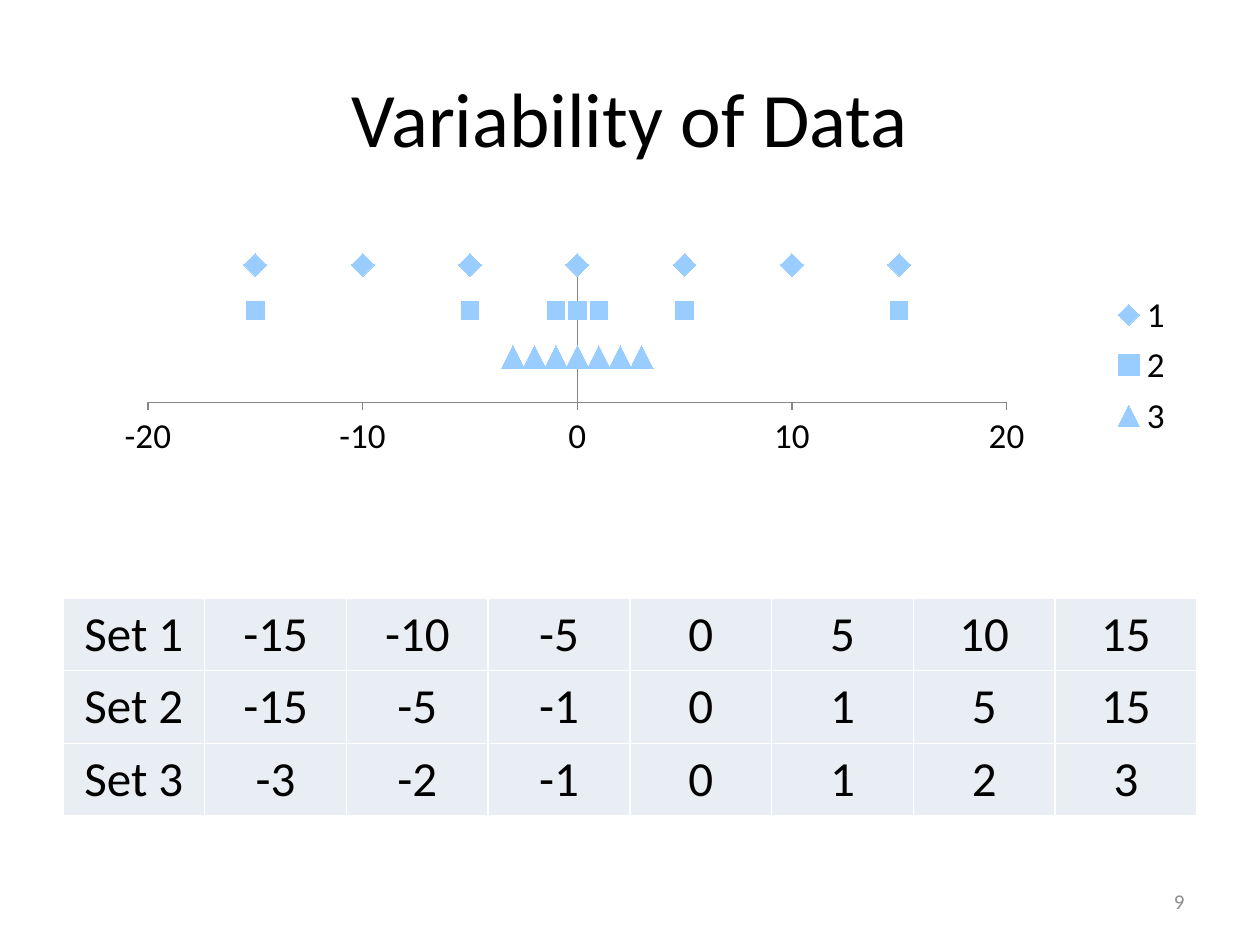
from lxml.etree import SubElement as Sub
from pptx import Presentation
from pptx.chart.data import XyChartData
from pptx.dml.color import RGBColor as RGB
from pptx.enum.chart import XL_CHART_TYPE as Kind, XL_LEGEND_POSITION as Side
from pptx.enum.chart import XL_MARKER_STYLE as Mark, XL_TICK_LABEL_POSITION as Label
from pptx.enum.chart import XL_TICK_MARK as Tick
from pptx.enum.text import MSO_ANCHOR as Anchor, PP_ALIGN as Align
from pptx.oxml import parse_xml
from pptx.oxml.ns import nsdecls, qn
from pptx.util import Inches, Pt

W, H = 10, 7.5
FONT = "Calibri"
HUES = {"text": "000000", "page": "8C8C8C", "cell": "E9EDF4",
        "edge": "FFFFFF", "mark": "99CCFF", "axis": "868686"}
SETS = [[-15, -10, -5, 0, 5, 10, 15],
        [-15, -5, -1, 0, 1, 5, 15],
        [-3, -2, -1, 0, 1, 2, 3]]
LEVELS = [100, 67, 33]
MARKS = [(Mark.DIAMOND, 13), (Mark.SQUARE, 10), (Mark.TRIANGLE, 13)]
PLOT = {"x": 0.049, "y": 0.094, "w": 0.786, "h": 0.557}
TEXTS = [("Variability of Data", (0.05, 0.04, 0.9, 1 / 6), 44, "text", Align.CENTER),
         ("9", (0.717, 0.927, 0.233, 0.053), 12, "page", Align.RIGHT)]
CHART = (0.075, 0.256, 0.867, 0.261)
TABLE = (0.05, 0.633, 0.9, 0.229)
AXES = {
    "x": {"minimum_scale": -20, "maximum_scale": 20, "major_unit": 10,
          "major_tick_mark": Tick.OUTSIDE},
    "y": {"minimum_scale": 0, "maximum_scale": 100, "major_unit": 33,
          "major_tick_mark": Tick.NONE, "tick_label_position": Label.NONE},
}


def place(box):
    """Turn shares of the slide into lengths."""
    return [Inches(part * full) for part, full in zip(box, (W, H, W, H))]


def style(font, size, hue="text"):
    font.name, font.size = FONT, Pt(size)
    font.color.rgb = RGB.from_string(HUES[hue])


def write(frame, text, size, hue, align):
    para = frame.paragraphs[0]
    para.alignment = align
    run = para.add_run()
    run.text = text
    style(run.font, size, hue)


def edge(cell):
    """Draw a thin line on each side of a cell."""
    props = cell._tc.get_or_add_tcPr()
    for i, side in enumerate("LRTB"):
        props.insert(i, parse_xml(
            f'<a:ln{side} {nsdecls("a")} w="12700"><a:solidFill>'
            f'<a:srgbClr val="{HUES["edge"]}"/></a:solidFill></a:ln{side}>'))


def add_text(slide, text, box, size, hue, align):
    frame = slide.shapes.add_textbox(*place(box)).text_frame
    frame.word_wrap = True
    frame.vertical_anchor = Anchor.MIDDLE
    write(frame, text, size, hue, align)


def add_grid(slide):
    rows = [[f"Set {i}", *map(str, vals)] for i, vals in enumerate(SETS, 1)]
    grid = slide.shapes.add_table(len(rows), len(rows[0]), *place(TABLE)).table
    grid.first_row = grid.horz_banding = False
    for r, row in enumerate(rows):
        for c, text in enumerate(row):
            cell = grid.cell(r, c)
            cell.fill.solid()
            cell.fill.fore_color.rgb = RGB.from_string(HUES["cell"])
            write(cell.text_frame, text, 28, "text", Align.CENTER)
            edge(cell)


def set_plot(chart):
    """Fix the inner plot area inside the chart."""
    area = chart._chartSpace.chart.plotArea
    for old in area.findall(qn("c:layout")):
        area.remove(old)
    layout = parse_xml(f'<c:layout {nsdecls("c")}/>')
    area.insert(0, layout)
    manual = Sub(layout, qn("c:manualLayout"))
    for tag, val in [("layoutTarget", "inner"), ("xMode", "edge"),
                     ("yMode", "edge"), *PLOT.items()]:
        Sub(manual, qn(f"c:{tag}")).set("val", str(val))


def add_plot(slide):
    data = XyChartData()
    for i, (vals, level) in enumerate(zip(SETS, LEVELS), 1):
        line = data.add_series(str(i))
        for val in vals:
            line.add_data_point(val, level)
    chart = slide.shapes.add_chart(Kind.XY_SCATTER, *place(CHART), data).chart
    style(chart.font, 10)
    chart.has_title = False
    chart.has_legend = True
    chart.legend.position = Side.RIGHT
    chart.legend.include_in_layout = False
    style(chart.legend.font, 20)
    chart.plots[0].vary_by_categories = False
    for line, (shape, size) in zip(chart.plots[0].series, MARKS):
        line.smooth = False
        line.format.line.fill.background()
        mark = line.marker
        mark.style, mark.size = shape, size
        mark.format.fill.solid()
        mark.format.fill.fore_color.rgb = RGB.from_string(HUES["mark"])
        mark.format.line.fill.background()
    for axis, key in [(chart.category_axis, "x"), (chart.value_axis, "y")]:
        for name, val in AXES[key].items():
            setattr(axis, name, val)
        axis.has_major_gridlines = False
        axis.minor_tick_mark = Tick.NONE
        axis.format.line.width = Pt(0.75)
        axis.format.line.color.rgb = RGB.from_string(HUES["axis"])
    style(chart.category_axis.tick_labels.font, 20)
    set_plot(chart)


def main():
    deck = Presentation()
    deck.slide_width, deck.slide_height = Inches(W), Inches(H)
    slide = deck.slides.add_slide(deck.slide_layouts[6])
    add_grid(slide)
    add_plot(slide)
    for item in TEXTS:
        add_text(slide, *item)
    deck.save("out.pptx")


if __name__ == "__main__":
    main()
